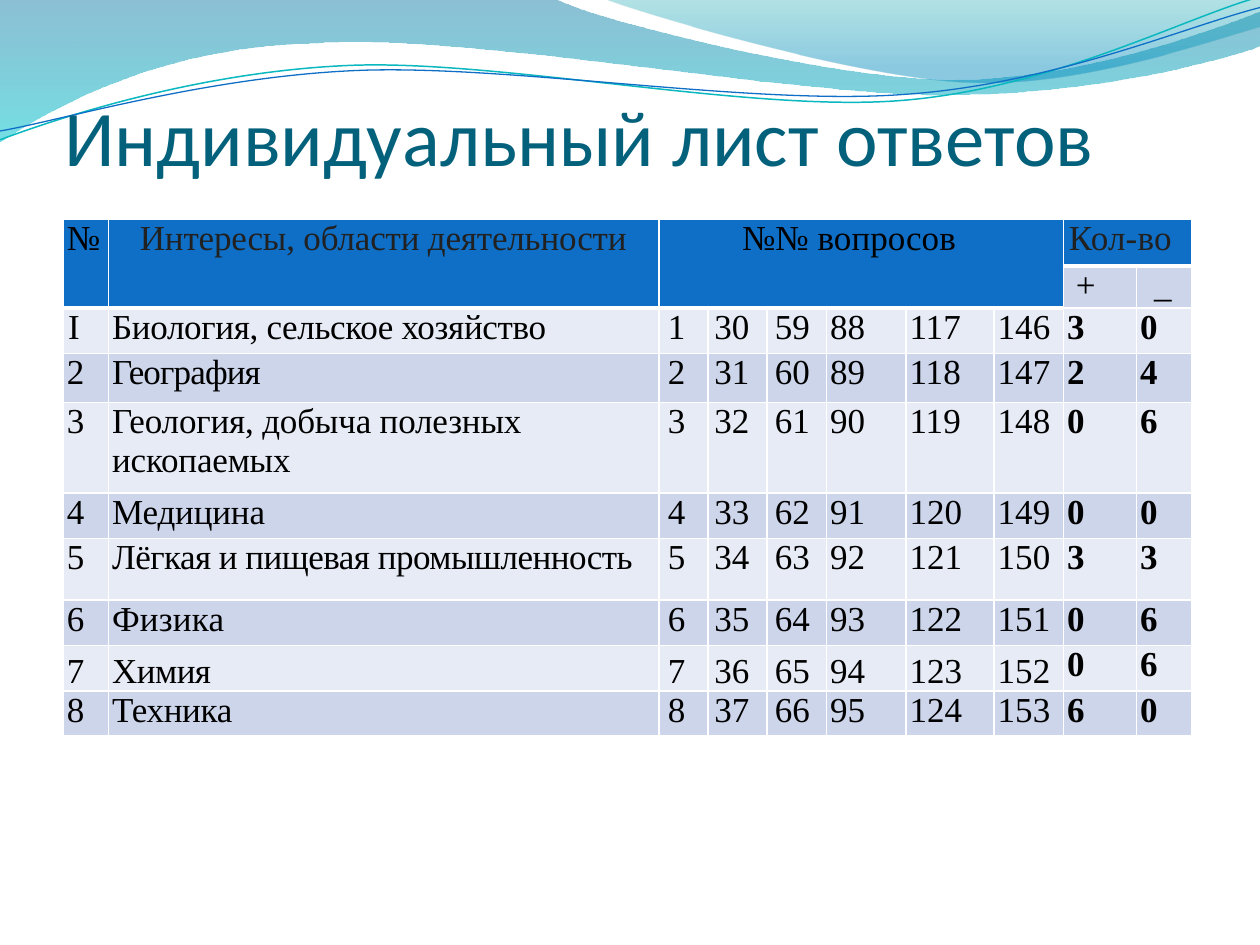
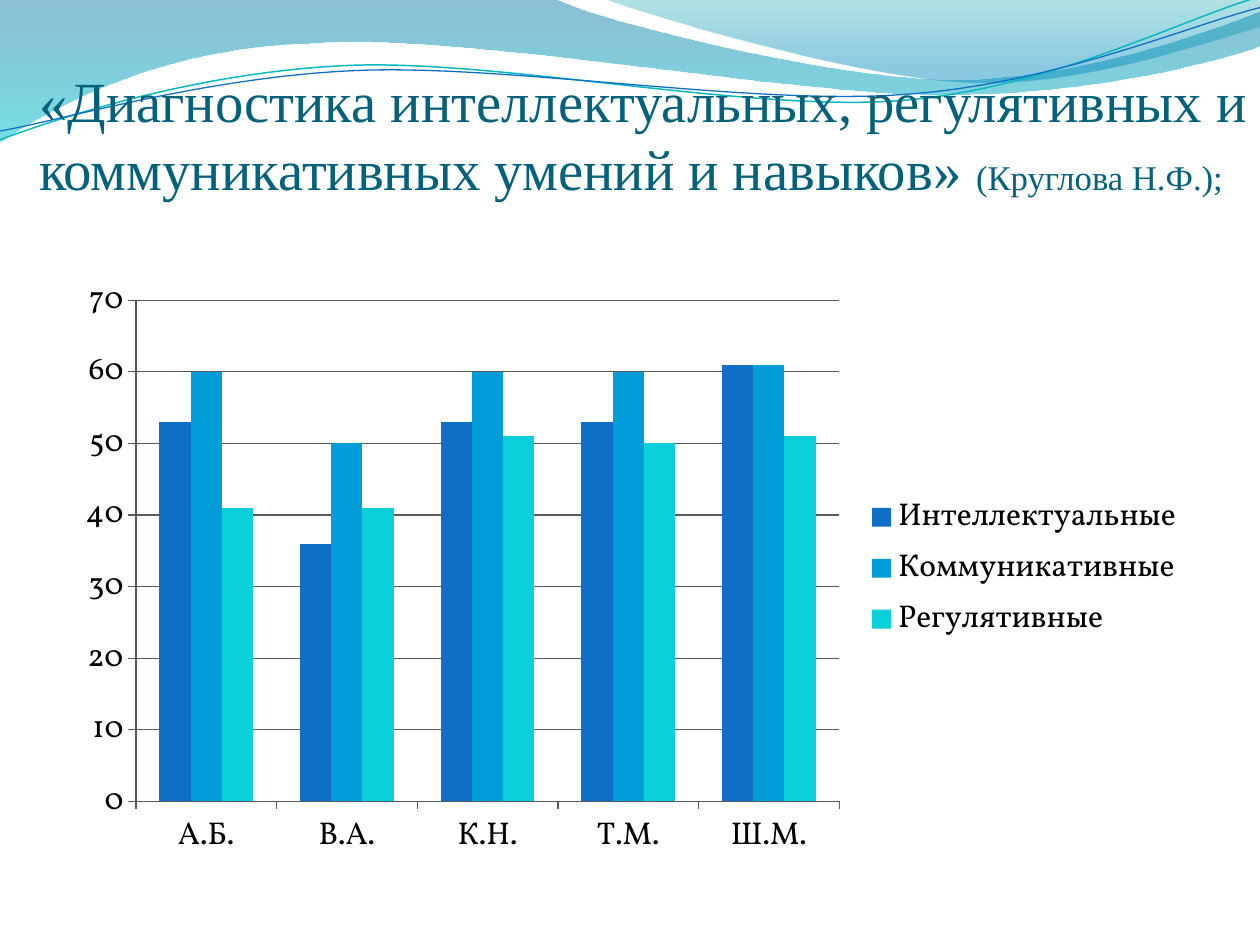
from lxml import etree
from pptx import Presentation
from pptx.chart.data import CategoryChartData
from pptx.dml.color import RGBColor
from pptx.enum.chart import XL_CHART_TYPE, XL_LEGEND_POSITION, XL_TICK_MARK
from pptx.enum.text import MSO_ANCHOR, PP_ALIGN
from pptx.oxml.ns import qn
from pptx.util import Inches, Pt

COLUMN = XL_CHART_TYPE.COLUMN_CLUSTERED
LEGEND_RIGHT = XL_LEGEND_POSITION.RIGHT
TICK_OUT = XL_TICK_MARK.OUTSIDE
TOP, BOTTOM = MSO_ANCHOR.TOP, MSO_ANCHOR.BOTTOM
LEFT, RIGHT = PP_ALIGN.LEFT, PP_ALIGN.RIGHT

BLUE, SKY, TURQUOISE = "0F6FC6", "009DD9", "0BD0D9"
TITLE_COLOR, BLACK, WHITE, DARK = "04617B", "000000", "FFFFFF", "212121"
BAND_LIGHT, BAND_DARK = "E7EBF5", "CCD5EA"
GRID = "595959"
SERIF = "Times New Roman"


def color(value):
    return RGBColor.from_string(value)


def add_run(p, text, fmt, value, spacing=0):
    r = p.add_run()
    r.text = text
    for name, setting in fmt.items():
        setattr(r.font, name, setting)
    r.font.color.rgb = color(value)
    if spacing:
        r._r.get_or_add_rPr().set("spc", str(round(spacing * 100)))


waves = [
    {"points": [(0, 0), (4.4, -0.01), (4.76, 0.17, 6.64, 0.63, 7.58, 0.63),
                (8.53, 0.63, 9.58, 0.26, 10, 0.09), (10.01, 0.36),
                (9.83, 0.44, 8.7, 0.76, 7.46, 0.75),
                (6.22, 0.75, 3.82, 0.28, 2.57, 0.34),
                (1.29, 0.36, 0.46, 0.83, -0.01, 1.13), (0, 0)],
     "stops": [(0, "0074A1", 45), (1, "00C6CF", 55)]},
    {"points": [(4.79, -0.01), (5.09, 0.11, 6.82, 0.62, 7.69, 0.65),
                (8.56, 0.69, 9.61, 0.32, 10, 0.21), (10, 0), (4.79, -0.01)],
     "stops": [(0, "00A1A9", 30), (0.8, "008BBF", 45)]},
    {"points": [(0, 1.11), (0.48, 0.93, 1.58, 0.57, 2.77, 0.52),
                (3.95, 0.47, 5.93, 0.89, 7.13, 0.8),
                (8.33, 0.71, 9.38, 0.15, 9.98, -0.02)],
     "line": ("0AB8BF", 0.85)},
    {"points": [(0, 1.04), (0.47, 0.96, 1.64, 0.61, 2.83, 0.56),
                (4.03, 0.51, 5.97, 0.84, 7.17, 0.75),
                (8.36, 0.67, 9.41, 0.21, 10, 0.06)],
     "line": (BLUE, 0.75)},
]
titles = [
    {"at": (0.51, 0.2, 9, 1.25), "font": "Calibri",
     "runs": [("Индивидуальный лист ответов", 45)]},
    {"at": (0.31, 0.35, 9.69, 1.25), "font": SERIF,
     "runs": [("«Диагностика интеллектуальных, регулятивных и "
               "коммуникативных умений и навыков» ", 32.4),
              ("(Круглова Н.Ф.);", 19.8)]},
]

prs = Presentation()
prs.slide_width, prs.slide_height = Inches(10), Inches(7.5)
slides = [prs.slides.add_slide(prs.slide_layouts[6]) for title in titles]

for number, wave in enumerate(waves):
    points = wave["points"]
    anchors = [(Inches(point[-2]), Inches(point[-1])) for point in points]
    builder = slides[0].shapes.build_freeform(*anchors[0])
    builder.add_line_segments(anchors[1:], close="stops" in wave)
    sp = builder.convert_to_shape()
    sp.shadow.inherit = False
    segments = list(sp._element.iter(qn("a:lnTo")))
    for segment, point in zip(segments, points[1:]):
        if len(point) == 6:
            curve = etree.Element(qn("a:cubicBezTo"))
            for x, y in zip(point[::2], point[1::2]):
                etree.SubElement(curve, qn("a:pt"), x=str(Inches(x) - sp.left),
                                 y=str(Inches(y) - sp.top))
            segment.getparent().replace(segment, curve)
    if "stops" in wave:
        sp.line.fill.background()
        sp.fill.gradient()
        sp.fill.gradient_angle = 270
        for stop, (position, value, alpha) in zip(sp.fill.gradient_stops, wave["stops"]):
            stop.position = position
            stop.color.rgb = color(value)
        stop_colors = sp._element.spPr.iter(qn("a:srgbClr"))
        for clr, (position, value, alpha) in zip(stop_colors, wave["stops"]):
            etree.SubElement(clr, qn("a:alpha"), val=str(alpha * 1000))
    else:
        sp.fill.background()
        value, width = wave["line"]
        sp.line.color.rgb = color(value)
        sp.line.width = Pt(width)
    sp._element.nvSpPr.cNvPr.set("id", str(20 + number))
    prs.slide_master.shapes._spTree.append(sp._element)

for s, title in zip(slides, titles):
    sp = s.shapes.add_textbox(*[Inches(v) for v in title["at"]])
    tf = sp.text_frame
    frame = {"word_wrap": True, "vertical_anchor": BOTTOM, "margin_left": 0,
             "margin_right": 0, "margin_top": Inches(0.05), "margin_bottom": 0}
    for name, setting in frame.items():
        setattr(tf, name, setting)
    for text, size in title["runs"]:
        add_run(tf.paragraphs[0], text, {"name": title["font"], "size": Pt(size)}, TITLE_COLOR)

interests = [
    ("Биология, сельское хозяйство", -0.2, 3, 0),
    ("География", -0.5, 2, 4),
    ("Геология, добыча полезных ископаемых", -0.1, 0, 6),
    ("Медицина", -0.1, 0, 0),
    ("Лёгкая и пищевая промышленность", -0.3, 3, 3),
    ("Физика", 0.1, 0, 6),
    ("Химия", -0.3, 0, 6),
    ("Техника", -0.2, 6, 0),
]
col_widths = [0.36, 4.37, 0.39, 0.47, 0.47, 0.63, 0.7, 0.55, 0.58, 0.44]
row_heights = [0.37, 0.14, 0.36, 0.39, 0.72, 0.36, 0.49, 0.36, 0.36, 0.36]
question_indents = [0.04, 0.02, 0.03, 0, 0, 0]

entries = [
    (0, 0, "№", 0, 0, BLACK, LEFT),
    (0, 1, "Интересы, области деятельности", 0.22, -0.1, DARK, LEFT),
    (0, 2, "№№ вопросов", 0.63, 0, BLACK, LEFT),
    (0, 8, "Кол-во", 0.13, 0.1, DARK, RIGHT),
    (1, 8, "+", 0.07, 0, BLACK, LEFT),
    (1, 9, "_", 0.13, 0, BLACK, RIGHT),
]
for number, (interest, spacing, plus, minus) in enumerate(interests, 1):
    row = number + 1
    label, indent = ("I", 0.01) if number == 1 else (str(number), 0)
    entries.append((row, 0, label, indent, 0, BLACK, LEFT))
    entries.append((row, 1, interest, 0, spacing, BLACK, LEFT))
    for k, indent in enumerate(question_indents):
        entries.append((row, 2 + k, str(number + 29 * k), indent, 0, BLACK, LEFT))
    entries.append((row, 8, str(plus), 0, 0, BLACK, LEFT))
    entries.append((row, 9, str(minus), 0, 0, BLACK, LEFT))

table = slides[0].shapes.add_table(
    len(row_heights), len(col_widths),
    Inches(0.5), Inches(1.74), Inches(8.95), Inches(4.11)).table
table.first_row = table.horz_banding = False
for column, width in zip(table.columns, col_widths):
    column.width = Inches(width)
for table_row, height in zip(table.rows, row_heights):
    table_row.height = Inches(height)

for row in range(len(row_heights)):
    for col in range(len(col_widths)):
        cell = table.cell(row, col)
        header = row == 0 or (row == 1 and col < 8)
        margins = {"margin_left": Inches(0.03), "margin_right": Inches(0.03),
                   "margin_top": 0, "margin_bottom": 0,
                   "vertical_anchor": BOTTOM if row == 8 and col < 8 else TOP}
        for name, setting in margins.items():
            setattr(cell, name, setting)
        for side in "LRTB":
            width = 3 if row == 0 and side == "B" else 1
            ln = etree.SubElement(cell._tc.get_or_add_tcPr(), qn(f"a:ln{side}"), w=str(Pt(width)))
            fill = etree.SubElement(ln, qn("a:solidFill"))
            etree.SubElement(fill, qn("a:srgbClr"), val=WHITE)
        cell.fill.solid()
        band = BAND_DARK if row % 2 else BAND_LIGHT
        cell.fill.fore_color.rgb = color(BLUE if header else band)

for top, left, bottom, right in [(0, 0, 1, 0), (0, 1, 1, 1), (0, 2, 1, 7), (0, 8, 0, 9)]:
    table.cell(top, left).merge(table.cell(bottom, right))

for row, col, text, indent, spacing, value, align in entries:
    p = table.cell(row, col).text_frame.paragraphs[0]
    p.alignment = align
    if indent:
        side = "marR" if align == RIGHT else "marL"
        p._p.get_or_add_pPr().set(side, str(Inches(indent)))
    fmt = {"name": SERIF, "size": Pt(20), "bold": row > 1 and col > 7}
    add_run(p, text, fmt, value, spacing)

skills = [
    ("Интеллектуальные", [53, 36, 53, 53, 61], BLUE),
    ("Коммуникативные", [60, 50, 60, 60, 61], SKY),
    ("Регулятивные", [41, 41, 51, 50, 51], TURQUOISE),
]
data = CategoryChartData()
data.categories = ["А.Б.", "В.А.", "К.Н.", "Т.М.", "Ш.М."]
for skill, scores, value in skills:
    data.add_series(skill, scores)
chart = slides[1].shapes.add_chart(
    COLUMN, Inches(0.5), Inches(2.11), Inches(9), Inches(4.8), data).chart
chart.has_title = False
chart.font.name = "Vollkorn"
chart.font.size = Pt(18)
chart.font.color.rgb = color(BLACK)
chart.has_legend = True
chart.legend.position = LEGEND_RIGHT
chart.legend.include_in_layout = False

plot = chart.plots[0]
plot.vary_by_categories = False
plot.gap_width = 150
plot.overlap = 0
for series, (skill, scores, value) in zip(plot.series, skills):
    series.format.fill.solid()
    series.format.fill.fore_color.rgb = color(value)

axis = chart.value_axis
scale = {"minimum_scale": 0, "maximum_scale": 70, "major_unit": 10, "has_major_gridlines": True}
for name, setting in scale.items():
    setattr(axis, name, setting)
for ax in (axis, chart.category_axis):
    ax.major_tick_mark = TICK_OUT
for item in (axis, chart.category_axis, axis.major_gridlines):
    item.format.line.color.rgb = color(GRID)
    item.format.line.width = Pt(0.75)

prs.save("out.pptx")
